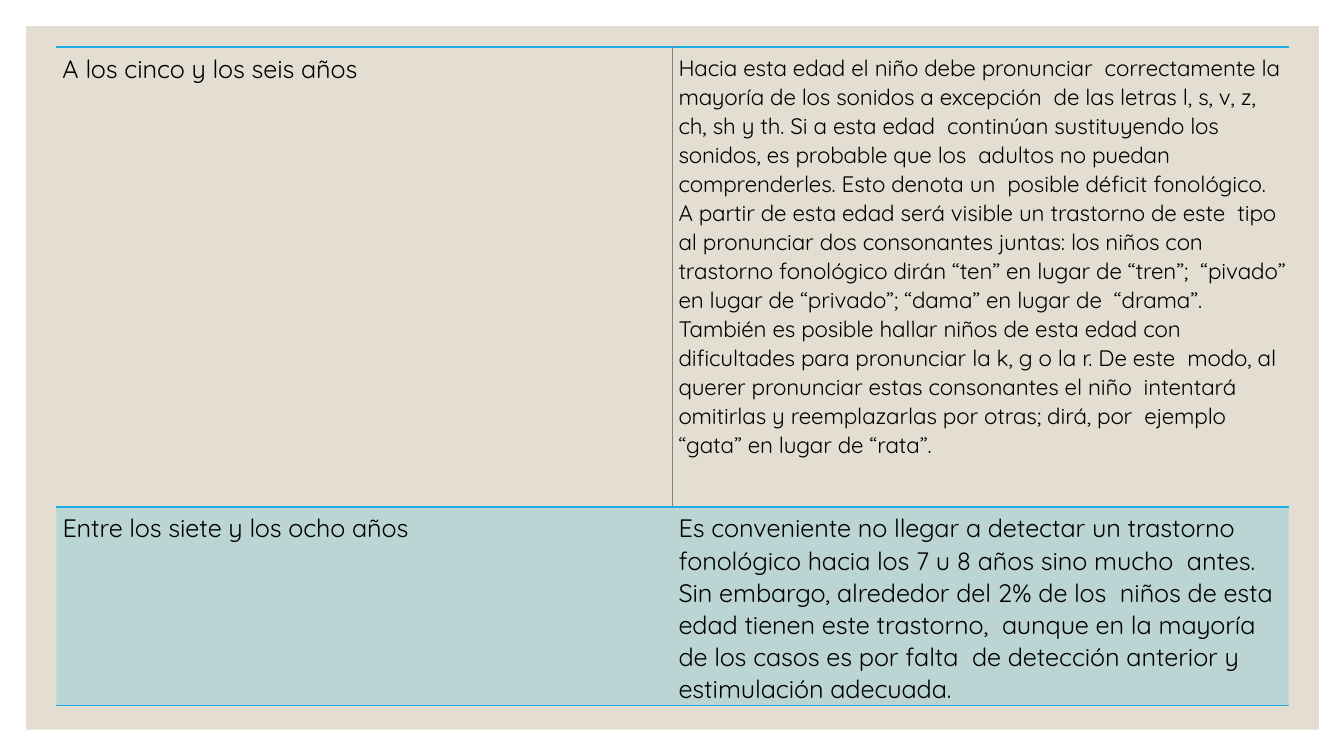
from lxml import etree
from pptx import Presentation
from pptx.dml.color import RGBColor
from pptx.enum.shapes import MSO_SHAPE
from pptx.oxml.ns import qn
from pptx.util import Inches, Pt

RECTANGLE = MSO_SHAPE.RECTANGLE
SAND = RGBColor(0xE3, 0xDE, 0xD1)
BLUE = RGBColor(0x1C, 0xAD, 0xE4)
GREY = RGBColor(0x80, 0x80, 0x80)
BLACK = RGBColor(0, 0, 0)
FONT = "Quicksand"
TRACKING = "-5"
TEXT_INDENT = 0.06
COLUMN_WIDTH = 6.11
ROW_HEIGHTS = (4.56, 1.95)

AGE_FIVE_SIX = "A los cinco y los seis años"
SIGNS_FIVE_SIX = (
    "Hacia esta edad el niño debe pronunciar  correctamente la mayoría de los "
    "sonidos a excepción  de las letras l, s, v, z, ch, sh y th. Si a esta edad  "
    "continúan sustituyendo los sonidos, es probable que los  adultos no puedan "
    "comprenderles. Esto denota un  posible déficit fonológico.",
    "A partir de esta edad será visible un trastorno de este  tipo al pronunciar "
    "dos consonantes juntas: los niños con  trastorno fonológico dirán “ten” en "
    "lugar de “tren”;  “pivado” en lugar de “privado”; “dama” en lugar de  “drama”.",
    "También es posible hallar niños de esta edad con  dificultades para "
    "pronunciar la k, g o la r. De este  modo, al querer pronunciar estas "
    "consonantes el niño  intentará omitirlas y reemplazarlas por otras; dirá, "
    "por  ejemplo “gata” en lugar de “rata”.",
)
AGE_SEVEN_EIGHT = "Entre los siete y los ocho años"
SIGNS_SEVEN_EIGHT = (
    "Es conveniente no llegar a detectar un trastorno  fonológico hacia los 7 u 8 "
    "años sino mucho  antes. Sin embargo, alrededor del 2% de los  niños de esta "
    "edad tienen este trastorno,  aunque en la mayoría de los casos es por falta  "
    "de detección anterior y estimulación adecuada."
)


def add_panel(slide, left, top, width, height):
    panel = slide.shapes.add_shape(
        RECTANGLE, Inches(left), Inches(top), Inches(width), Inches(height))
    panel.shadow.inherit = False
    panel.fill.solid()
    panel.fill.fore_color.rgb = SAND
    panel.line.fill.background()


def fill_cell(cell, color, opacity=100):
    cell.fill.solid()
    cell.fill.fore_color.rgb = color
    if opacity < 100:
        color_element = cell._tc.tcPr.find(f".//{qn('a:srgbClr')}")
        alpha = etree.SubElement(color_element, qn("a:alpha"))
        alpha.set("val", str(opacity * 1000))


def set_borders(cell, **borders):
    """Draw the given sides (L, R, T, B) as (color, points) and clear the rest."""
    properties = cell._tc.get_or_add_tcPr()
    for position, side in enumerate("LRTB"):
        line = etree.Element(qn(f"a:ln{side}"))
        if side in borders:
            color, points = borders[side]
            line.set("w", str(Pt(points)))
            fill = etree.SubElement(line, qn("a:solidFill"))
            etree.SubElement(fill, qn("a:srgbClr")).set("val", str(color))
        else:
            etree.SubElement(line, qn("a:noFill"))
        properties.insert(position, line)


def write_cell(cell, texts, size, line_spacing, space_before, margin_top,
               left=TEXT_INDENT, hanging=0):
    """Write one paragraph per text; only the first has space before it."""
    cell.margin_left = cell.margin_right = cell.margin_bottom = 0
    cell.margin_top = Inches(margin_top)
    cell.text_frame.text = "\n".join(texts)
    for index, paragraph in enumerate(cell.text_frame.paragraphs):
        paragraph.line_spacing = line_spacing
        paragraph.space_before = Pt(0 if index else space_before)
        properties = paragraph._p.get_or_add_pPr()
        properties.set("marL", str(Inches(left)))
        properties.set("indent", str(-Inches(hanging)))
        if hanging:
            tabs = etree.SubElement(properties, qn("a:tabLst"))
            etree.SubElement(tabs, qn("a:tab"), pos=str(Inches(left)), algn="l")
        for run in paragraph.runs:
            run.font.name = FONT
            run.font.size = Pt(size)
            run.font.color.rgb = BLACK
            run._r.get_or_add_rPr().set("spc", TRACKING)


def add_age_table(slide, left, top):
    table = slide.shapes.add_table(
        2, 2, Inches(left), Inches(top),
        Inches(2 * COLUMN_WIDTH), Inches(sum(ROW_HEIGHTS))).table
    table.first_row = table.horz_banding = False
    for column in table.columns:
        column.width = Inches(COLUMN_WIDTH)
    for row, height in zip(table.rows, ROW_HEIGHTS):
        row.height = Inches(height)

    age, signs = table.cell(0, 0), table.cell(0, 1)
    write_cell(age, [AGE_FIVE_SIX], 18, 1, 4, 0.06)
    write_cell(signs, SIGNS_FIVE_SIX, 16, 1.04, 4.2, 0.06)

    merged = table.cell(1, 0)
    merged.merge(table.cell(1, 1))
    write_cell(merged, [f"{AGE_SEVEN_EIGHT}\t{SIGNS_SEVEN_EIGHT}"], 18, 1.02, 3.4,
               0.05, left=COLUMN_WIDTH + TEXT_INDENT, hanging=COLUMN_WIDTH)

    thick, thin, divider = (BLUE, 1.5), (BLUE, 1), (GREY, 0.5)
    for cell in (age, signs):
        fill_cell(cell, SAND)
    set_borders(age, T=thick, B=thin, R=divider)
    set_borders(signs, T=thick, B=thin, L=divider)
    fill_cell(merged, BLUE, opacity=20)
    for cell in (merged, table.cell(1, 1)):
        set_borders(cell, T=thin, B=thin)


def main():
    presentation = Presentation()
    presentation.slide_width = Inches(13.33)
    presentation.slide_height = Inches(7.5)
    slide = presentation.slides.add_slide(presentation.slide_layouts[6])
    add_panel(slide, 0.26, 0.26, 12.82, 6.98)
    add_age_table(slide, 0.56, 0.47)
    presentation.save("out.pptx")


if __name__ == "__main__":
    main()
